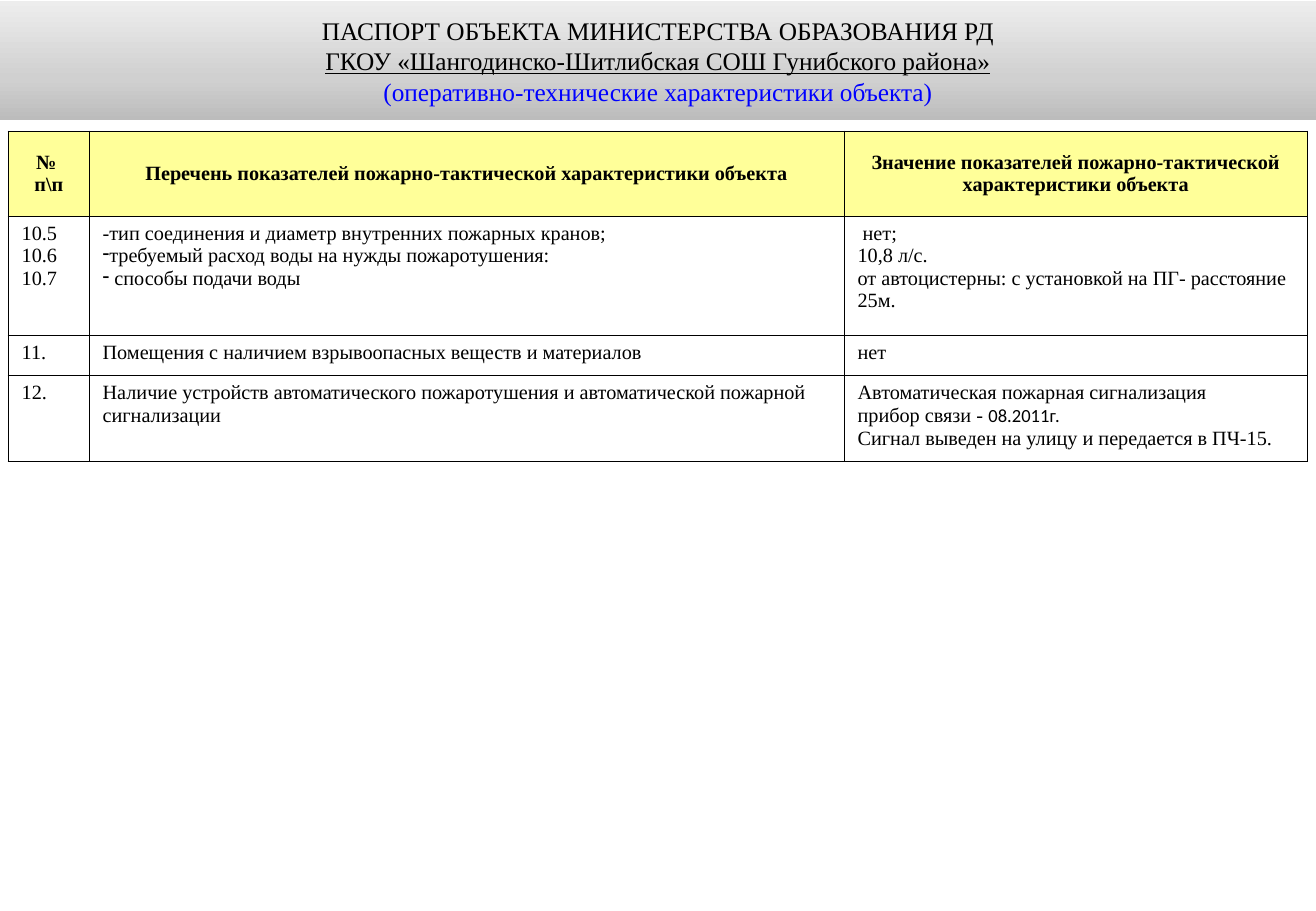
"""Builds the fire-safety passport slide: a gradient heading and a table of indicators."""
from copy import deepcopy
from lxml import etree
from pptx import Presentation
from pptx.dml.color import RGBColor
from pptx.enum import text as t
from pptx.oxml import ns
from pptx.util import Pt

SERIF = "Times New Roman"
HEAD = [
    ("ПАСПОРТ ОБЪЕКТА МИНИСТЕРСТВА ОБРАЗОВАНИЯ РД", {}),
    ("ГКОУ «Шангодинско-Шитлибская СОШ Гунибского района»", {"line": True}),
    ("(оперативно-технические характеристики объекта)", {"color": "0000FF"}),
]
SHADES = [(0, "BCBCBC"), (0.35, "D0D0D0"), (1, "EDEDED")]
BULLET = "•"
ROWS = [
    [["№ ", "п\\п"],
     ["Перечень показателей пожарно-тактической характеристики объекта"],
     ["Значение показателей пожарно-тактической характеристики объекта"]],
    [["10.5", "10.6", "10.7"],
     ["-тип соединения и диаметр внутренних пожарных кранов;",
      BULLET + "требуемый расход воды на нужды пожаротушения:",
      BULLET + " способы подачи воды"],
     [" нет;", "10,8 л/с.",
      "от автоцистерны: с установкой на ПГ- расстояние 25м."]],
    [["11."],
     ["Помещения с наличием взрывоопасных веществ и материалов"],
     ["нет"]],
    [["12."],
     ["Наличие устройств автоматического пожаротушения и автоматической пожарной сигнализации"],
     ["Автоматическая пожарная сигнализация",
      ("прибор связи - ", "08.2011г."),
      "Сигнал выведен на улицу и передается в ПЧ-15."]],
]
WIDTHS = [48, 447.5, 274.5]
HEIGHTS = [50.4, 70.8, 23.6, 51]


def rgb(code):
    return RGBColor.from_string(code)


def write(para, words, size=12, font=SERIF, color="000000", bold=False, line=False):
    run = para.add_run()
    run.text = words
    face = run.font
    face.size, face.name, face.bold, face.underline = Pt(size), font, bold, line
    face.color.rgb = rgb(color)


def paras(frame, count):
    return [frame.paragraphs[0]] + [frame.add_paragraph() for _ in range(count - 1)]


def dash(para):
    props = para._p.get_or_add_pPr()
    props.set("marL", "0")
    props.set("indent", "0")
    etree.SubElement(props, ns.qn("a:buChar"), char="-")


def border(cell):
    props = cell._tc.get_or_add_tcPr()
    for spot, side in enumerate("LRTB"):
        edge = etree.Element(ns.qn("a:ln" + side), w=str(Pt(1)))
        fill = etree.SubElement(edge, ns.qn("a:solidFill"))
        etree.SubElement(fill, ns.qn("a:srgbClr"), val="000000")
        props.insert(spot, edge)


def shade(shape):
    shape.fill.gradient()
    shape.fill.gradient_angle = 90
    first = next(shape._element.spPr.iter(ns.qn("a:gs")))
    first.addnext(deepcopy(first))
    for stop, (place, code) in zip(shape.fill.gradient_stops, SHADES):
        stop.position = place
        stop.color.rgb = rgb(code)


def heading(slide):
    title = slide.shapes.title
    title.left, title.top, title.width, title.height = Pt(0), Pt(0.7), Pt(780), Pt(70.6)
    shade(title)
    frame = title.text_frame
    frame.word_wrap = True
    frame.auto_size = t.MSO_AUTO_SIZE.NONE
    frame.vertical_anchor = t.MSO_ANCHOR.MIDDLE
    for para, (words, form) in zip(paras(frame, len(HEAD)), HEAD):
        para.alignment = t.PP_ALIGN.CENTER
        write(para, words, size=15, **form)


def fill_cell(cell, lines, top):
    cell.margin_left = cell.margin_right = Pt(7.9)
    cell.margin_top = cell.margin_bottom = Pt(3.6)
    cell.vertical_anchor = t.MSO_ANCHOR.MIDDLE if top else t.MSO_ANCHOR.TOP
    cell.fill.solid()
    cell.fill.fore_color.rgb = rgb("FFFF99" if top else "FFFFFF")
    border(cell)
    for para, item in zip(paras(cell.text_frame, len(lines)), lines):
        para.alignment = t.PP_ALIGN.CENTER if top else t.PP_ALIGN.LEFT
        words, date = item if isinstance(item, tuple) else (item, "")
        if words.startswith(BULLET):
            dash(para)
        write(para, words.removeprefix(BULLET), bold=top)
        if date:
            write(para, date, size=11, font="Calibri")


def table(slide):
    frame = slide.shapes.add_table(len(ROWS), len(WIDTHS), Pt(5), Pt(77.8),
                                   Pt(sum(WIDTHS)), Pt(sum(HEIGHTS)))
    grid = frame.table
    for col, width in zip(grid.columns, WIDTHS):
        col.width = Pt(width)
    for num, (row, height) in enumerate(zip(grid.rows, HEIGHTS)):
        row.height = Pt(height)
        for cell, lines in zip(row.cells, ROWS[num]):
            fill_cell(cell, lines, num == 0)


def main():
    deck = Presentation()
    deck.slide_width, deck.slide_height = Pt(780), Pt(540)
    slide = deck.slides.add_slide(deck.slide_layouts[5])
    heading(slide)
    table(slide)
    deck.save("out.pptx")


if __name__ == "__main__":
    main()
